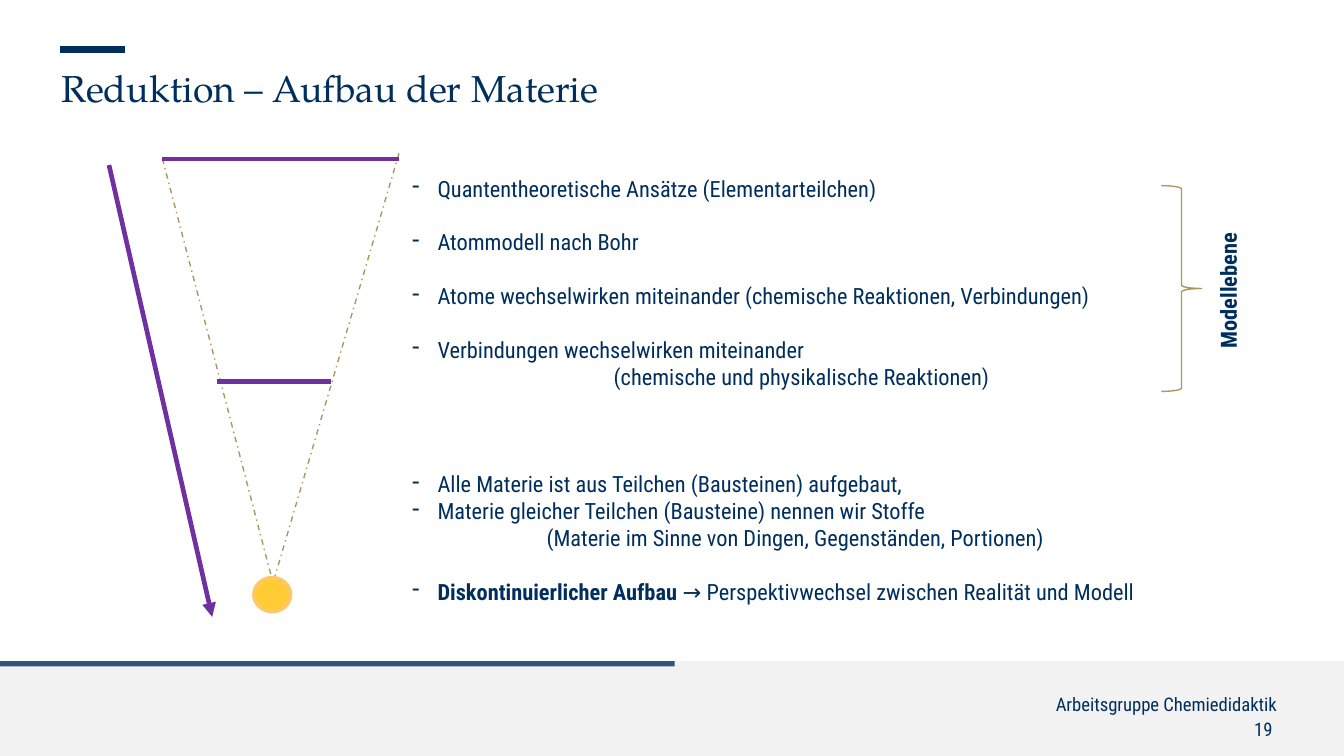
from lxml.etree import SubElement
from pptx import Presentation
from pptx.dml.color import RGBColor
from pptx.enum.dml import MSO_LINE_DASH_STYLE as Dash
from pptx.enum.shapes import MSO_CONNECTOR as Connector, MSO_SHAPE as Shape
from pptx.enum.text import PP_ALIGN as Align
from pptx.oxml.ns import qn
from pptx.util import Cm, Pt

COLORS = {
    "navy": "002F5D",
    "band": "F2F2F2",
    "gold": "AC975F",
    "purple": "7030A0",
    "amber": "FFC000",
    "rim": "FFC864",
}
BODY_FONT = "Roboto Condensed"
TITLE_FONT = "TeX Gyre Pagella"
LINE_HEIGHT = 14.4
HANGING = 0.48

STATEMENTS = [
    {"runs": [("Quantentheoretische Ansätze (Elementarteilchen)", False)]},
    {"runs": [("Atommodell nach Bohr", False)], "gap": 1},
    {"runs": [("Atome wechselwirken miteinander (chemische Reaktionen, Verbindungen)", False)], "gap": 1},
    {"runs": [("Verbindungen wechselwirken miteinander", False)], "gap": 1},
    {"runs": [("(chemische und physikalische Reaktionen)", False)], "indent": 3.81},
    {"runs": [("Alle Materie ist aus Teilchen (Bausteinen) aufgebaut,", False)], "gap": 3},
    {"runs": [("Materie gleicher Teilchen (Bausteine) nennen wir Stoffe", False)]},
    {"runs": [("(Materie im Sinne von Dingen, Gegenständen, Portionen)", False)], "indent": 2.54},
    {"runs": [("Diskontinuierlicher Aufbau ", True),
              ("→ Perspektivwechsel zwischen Realität und Modell", False)], "gap": 1},
]


def rgb(name):
    return RGBColor.from_string(COLORS[name])


def lengths(values):
    return [Cm(value) for value in values]


def style_font(font, size, name=BODY_FONT, bold=False):
    font.size = Pt(size)
    font.name = name
    font.bold = bold
    font.color.rgb = rgb("navy")


def add_text_frame(slide, box, inset=True, rotation=0):
    shape = slide.shapes.add_textbox(*lengths(box))
    shape.rotation = rotation
    frame = shape.text_frame
    frame.word_wrap = True
    if not inset:
        frame.margin_left = frame.margin_right = 0
        frame.margin_top = frame.margin_bottom = 0
    return frame


def add_text(slide, text, box, size=12, font=BODY_FONT, bold=False,
             align=Align.LEFT, inset=False, rotation=0):
    frame = add_text_frame(slide, box, inset, rotation)
    paragraph = frame.paragraphs[0]
    paragraph.alignment = align
    run = paragraph.add_run()
    run.text = text
    style_font(run.font, size, font, bold)


def add_statements(slide, box):
    frame = add_text_frame(slide, box)
    for index, statement in enumerate(STATEMENTS):
        paragraph = frame.add_paragraph() if index else frame.paragraphs[0]
        properties = paragraph._p.get_or_add_pPr()
        if "indent" in statement:
            properties.set("marL", str(Cm(statement["indent"])))
        else:
            properties.set("marL", str(Cm(HANGING)))
            properties.set("indent", str(-Cm(HANGING)))
            SubElement(properties, qn("a:buChar")).set("char", "-")
        if "gap" in statement:
            paragraph.space_before = Pt(statement["gap"] * LINE_HEIGHT)
        for text, bold in statement["runs"]:
            run = paragraph.add_run()
            run.text = text
            style_font(run.font, 12, bold=bold)


def add_figure(slide, kind, box, fill=None, opacity=100, line=None, width=1):
    shape = slide.shapes.add_shape(kind, *lengths(box))
    shape.shadow.inherit = False
    if fill:
        shape.fill.solid()
        shape.fill.fore_color.rgb = rgb(fill)
        if opacity < 100:
            color = shape._element.spPr.find(qn("a:solidFill"))[0]
            SubElement(color, qn("a:alpha")).set("val", str(opacity * 1000))
    else:
        shape.fill.background()
    if line:
        shape.line.color.rgb = rgb(line)
        shape.line.width = Pt(width)
    else:
        shape.line.fill.background()


def add_line(slide, start, end, color, width, dash=None, arrow=False):
    connector = slide.shapes.add_connector(Connector.STRAIGHT, *lengths(start + end))
    connector.line.color.rgb = rgb(color)
    connector.line.width = Pt(width)
    if dash:
        connector.line.dash_style = dash
    if arrow:
        SubElement(connector.line._get_or_add_ln(), qn("a:tailEnd")).set("type", "triangle")
    SubElement(connector._element.spPr, qn("a:effectLst"))


def add_footer(slide):
    add_figure(slide, Shape.RECTANGLE, (0, 12.5, 25.4, 1.79), fill="band")
    add_figure(slide, Shape.RECTANGLE, (0, 12.5, 12.75, 0.1), fill="navy", opacity=80)
    add_text(slide, "Arbeitsgruppe Chemiedidaktik", (8.59, 13.1, 15.54, 0.43),
             size=10, align=Align.RIGHT)
    add_text(slide, "19 ", (9.78, 13.56, 14.35, 0.43), size=10, align=Align.RIGHT)


def add_funnel(slide):
    tip = (5.16, 11.02)
    for corner in ((3.07, 3), (7.54, 2.9)):
        add_line(slide, corner, tip, "gold", 0.75, dash=Dash.DASH_DOT)
    add_figure(slide, Shape.OVAL, (4.8, 10.92, 0.69, 0.64),
               fill="amber", opacity=80, line="rim", width=2)
    for left, right, level in ((3.07, 7.54, 3), (4.11, 6.25, 7.21)):
        add_line(slide, (left, level), (right, level), "purple", 2.25)
    add_line(slide, (2.06, 3.12), (4.01, 11.66), "purple", 2.5, arrow=True)


def main():
    presentation = Presentation()
    presentation.slide_width, presentation.slide_height = Cm(25.4), Cm(14.29)
    slide = presentation.slides.add_slide(presentation.slide_layouts[6])
    add_footer(slide)
    add_line(slide, (1.14, 0.94), (2.36, 0.94), "navy", 3.5)
    add_text(slide, "Reduktion – Aufbau der Materie", (1.17, 1.24, 17.78, 0.86),
             size=20, font=TITLE_FONT)
    add_funnel(slide)
    add_statements(slide, (7.54, 3.18, 16.46, 8.46))
    add_figure(slide, Shape.RIGHT_BRACE, (21.95, 3.51, 0.76, 3.89), line="gold", width=0.75)
    add_text(slide, "Modellebene", (21.29, 5.11, 3.84, 0.76), bold=True,
             align=Align.CENTER, inset=True, rotation=270)
    presentation.save("out.pptx")


if __name__ == "__main__":
    main()
